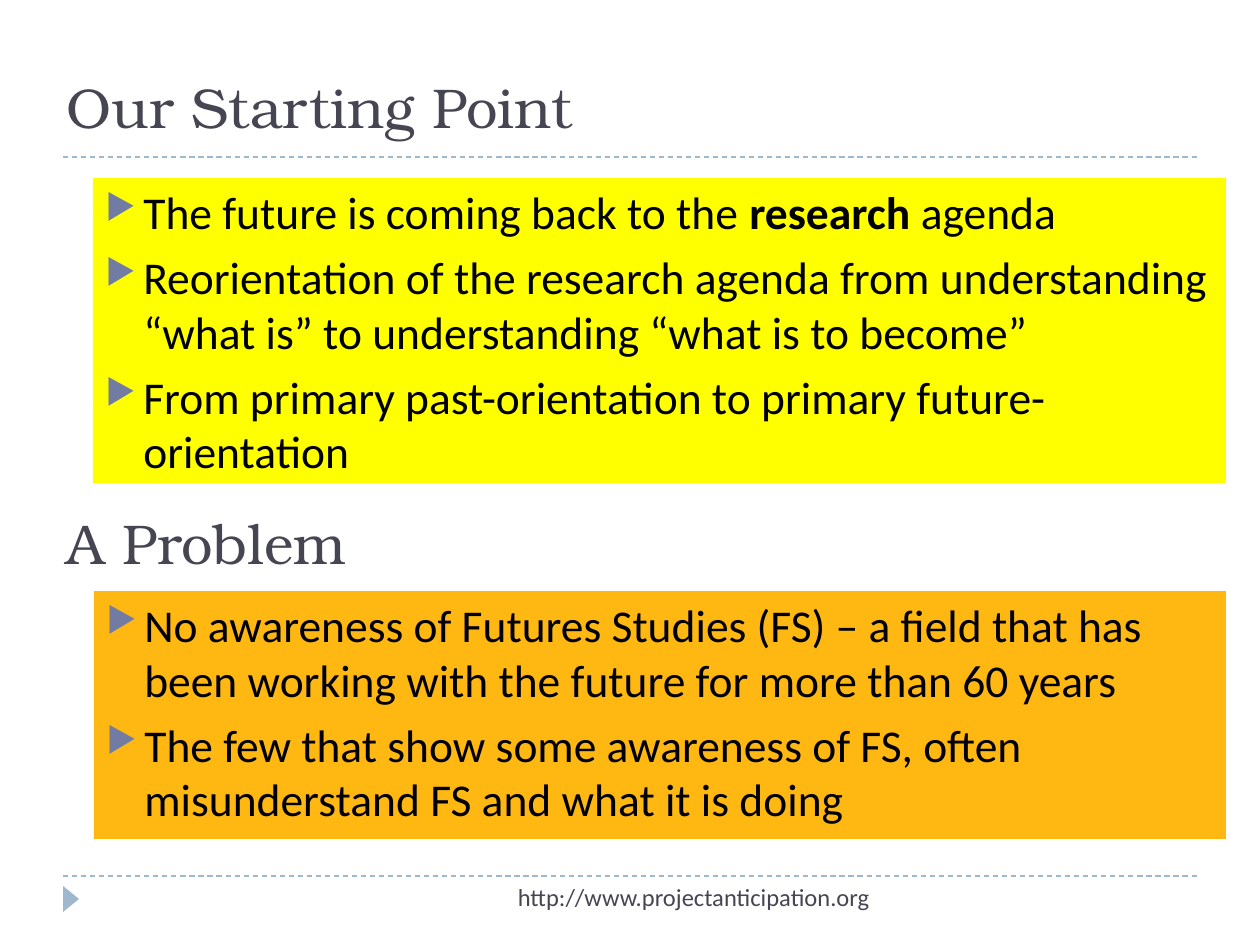
from lxml.etree import SubElement
from pptx import Presentation
from pptx.dml.color import RGBColor
from pptx.enum.dml import MSO_LINE
from pptx.enum.shapes import MSO_CONNECTOR, MSO_SHAPE
from pptx.enum.text import MSO_ANCHOR as ANCHOR, PP_ALIGN as ALIGN
from pptx.oxml.ns import qn
from pptx.util import Pt

PX = 914400 / 126
HEAD, BODY = "TeX Gyre Bonum", "Calibri"
INK, ACCENT, BULLET = "464653", "9FB8CD", "727CA3"

# Content: boxes are left, top, width, height; each bullet is a list of (text, bold) runs
HEADINGS = [
    ("Our Starting Point", (54, 32, 1134, 114)),
    ("A Problem", (54, 503, 1134, 79)),
]
PANELS = [
    ("FFFF00", (93, 178, 1133, 305), [
        [("The future is coming back to the ", False), ("research", True), (" agenda", False)],
        [("Reorientation of the research agenda from understanding “what is” "
          "to understanding “what is to become”", False)],
        [("From primary past-orientation to primary future-orientation", False)],
    ]),
    ("FFB811", (94, 591, 1132, 248), [
        [("No awareness of Futures Studies (FS) – a field that has been working "
          "with the future for more than 60 years", False)],
        [("The few that show some awareness of FS, often misunderstand FS "
          "and what it is doing", False)],
    ]),
]
FOOTER = ("http://www.projectanticipation.org", (399, 876, 483, 50))
RULES = [157, 876]
RULE_X = (63, 1197)
MARKER = (58, 891, 26, 16)
INDENT = 38


def px(n):
    return round(n * PX)


def color(value):
    return RGBColor.from_string(value)


def style(font, name, size, hue):
    font.name, font.size = name, Pt(size)
    font.color.rgb = color(hue)


def add_shape(kind, box, fill):
    sp = slide.shapes.add_shape(kind, *map(px, box))
    sp.shadow.inherit = False
    sp.fill.solid()
    sp.fill.fore_color.rgb = color(fill)
    sp.line.fill.background()
    return sp


def add_text(text, box, name, size, anchor, align):
    tf = slide.shapes.add_textbox(*map(px, box)).text_frame
    tf.word_wrap = True
    tf.vertical_anchor = anchor
    tf.text = text
    p = tf.paragraphs[0]
    p.alignment = align
    style(p.runs[0].font, name, size, INK)


def add_bullet(p):
    pPr = p._p.get_or_add_pPr()
    pPr.set("marL", str(px(INDENT)))
    pPr.set("indent", str(-px(INDENT)))
    clr = SubElement(pPr, qn("a:buClr"))
    SubElement(clr, qn("a:srgbClr"), val=BULLET)
    SubElement(pPr, qn("a:buSzPct"), val="76000")
    SubElement(pPr, qn("a:buChar"), char="▶")


prs = Presentation()
prs.slide_width, prs.slide_height = px(1260), px(945)
slide = prs.slides.add_slide(prs.slide_layouts[6])

# Dashed rules and footer marker
for y in RULES:
    line = slide.shapes.add_connector(
        MSO_CONNECTOR.STRAIGHT, px(RULE_X[0]), px(y), px(RULE_X[1]), px(y))
    line.line.color.rgb = color(ACCENT)
    line.line.width = Pt(0.75)
    line.line.dash_style = MSO_LINE.DASH
    SubElement(line._element.spPr, qn("a:effectLst"))
add_shape(MSO_SHAPE.ISOSCELES_TRIANGLE, MARKER, ACCENT).rotation = 90

# Headings and footer
for text, box in HEADINGS:
    add_text(text, box, HEAD, 32, ANCHOR.BOTTOM, ALIGN.LEFT)
add_text(*FOOTER, BODY, 14, ANCHOR.TOP, ALIGN.RIGHT)

# Bullet panels
for fill, box, bullets in PANELS:
    tf = add_shape(MSO_SHAPE.RECTANGLE, box, fill).text_frame
    tf.word_wrap = True
    tf.vertical_anchor = ANCHOR.TOP
    for i, runs in enumerate(bullets):
        p = tf.add_paragraph() if i else tf.paragraphs[0]
        p.alignment = ALIGN.LEFT
        p.space_before = Pt(6 if i else 0)
        add_bullet(p)
        for text, bold in runs:
            r = p.add_run()
            r.text = text
            style(r.font, BODY, 26, "000000")
            r.font.bold = bold

prs.save("out.pptx")
